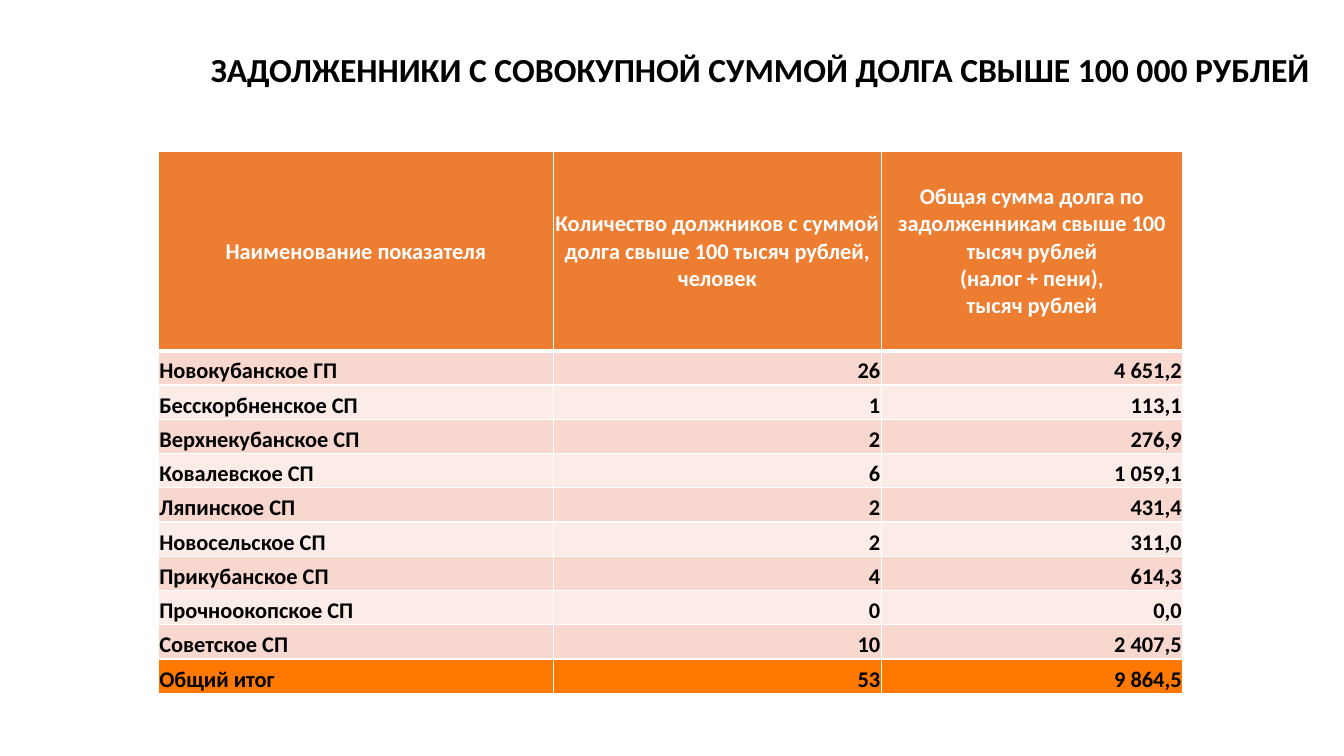
from dataclasses import dataclass

from lxml.etree import SubElement
from pptx import Presentation
from pptx.dml.color import RGBColor
from pptx.enum.text import MSO_ANCHOR, PP_ALIGN
from pptx.oxml.ns import qn
from pptx.util import Inches, Pt

COLORS = {
    "header": "ED7D31",
    "odd": "F8D7CE",
    "even": "FCECE8",
    "total": "FF7900",
    "white": "FFFFFF",
    "black": "000000",
}
FONT = "Calibri"
COLUMN_WIDTHS = (3.92, 3.25, 2.99)
HEADER_HEIGHT = 1.98
ROW_HEIGHT = 0.34


@dataclass
class Debt:
    settlement: str
    debtors: str
    amount: str


HEADER = Debt(
    "Наименование показателя",
    "Количество должников с суммой долга свыше 100 тысяч рублей, человек",
    "Общая сумма долга по задолженникам свыше 100 тысяч рублей\n(налог + пени),\nтысяч рублей",
)
DEBTS = [
    Debt("Новокубанское ГП", "26", "4 651,2"),
    Debt("Бесскорбненское СП", "1", "113,1"),
    Debt("Верхнекубанское СП", "2", "276,9"),
    Debt("Ковалевское СП", "6", "1 059,1"),
    Debt("Ляпинское СП", "2", "431,4"),
    Debt("Новосельское СП", "2", "311,0"),
    Debt("Прикубанское СП", "4", "614,3"),
    Debt("Прочноокопское СП", "0", "0,0"),
    Debt("Советское СП", "10", "2 407,5"),
]
TOTAL = Debt("Общий итог", "53", "9 864,5")


def format_paragraph(paragraph, size: int, color: str, align: PP_ALIGN) -> None:
    paragraph.alignment = align
    paragraph.font.name = FONT
    paragraph.font.size = Pt(size)
    paragraph.font.bold = True
    paragraph.font.color.rgb = RGBColor.from_string(COLORS[color])


def add_borders(cell, top: int, bottom: int) -> None:
    properties = cell._tc.get_or_add_tcPr()
    for tag, width in (("a:lnL", 1), ("a:lnR", 1), ("a:lnT", top), ("a:lnB", bottom)):
        border = SubElement(properties, qn(tag), w=str(Pt(width)))
        fill = SubElement(border, qn("a:solidFill"))
        SubElement(fill, qn("a:srgbClr"), val=COLORS["white"])


def fill_row(table, index: int, debt: Debt, fill: str) -> None:
    is_header = index == 0
    for column, text in enumerate((debt.settlement, debt.debtors, debt.amount)):
        cell = table.cell(index, column)
        cell.text = text
        cell.margin_left = cell.margin_right = cell.margin_top = Inches(0.01)
        cell.margin_bottom = 0
        cell.vertical_anchor = MSO_ANCHOR.MIDDLE if is_header else MSO_ANCHOR.BOTTOM
        add_borders(cell, 3 if index == 1 else 1, 3 if is_header else 1)
        cell.fill.solid()
        cell.fill.fore_color.rgb = RGBColor.from_string(COLORS[fill])
        if is_header:
            align = PP_ALIGN.CENTER
        else:
            align = PP_ALIGN.RIGHT if column else PP_ALIGN.LEFT
        for paragraph in cell.text_frame.paragraphs:
            format_paragraph(paragraph, 16, "white" if is_header else "black", align)


def add_title(slide) -> None:
    title = slide.shapes.title
    title.left, title.top = Inches(1.42), Inches(0.29)
    title.width, title.height = Inches(11.67), Inches(0.85)
    title.text_frame.text = "ЗАДОЛЖЕННИКИ С СОВОКУПНОЙ СУММОЙ ДОЛГА СВЫШЕ 100 000 РУБЛЕЙ"
    title.text_frame.vertical_anchor = MSO_ANCHOR.MIDDLE
    heading = title.text_frame.paragraphs[0]
    heading.line_spacing = 0.9
    format_paragraph(heading, 24, "black", PP_ALIGN.RIGHT)


def add_debt_table(slide) -> None:
    stripes = [(debt, ("odd", "even")[i % 2]) for i, debt in enumerate(DEBTS)]
    rows = [(HEADER, "header"), *stripes, (TOTAL, "total")]
    heights = [HEADER_HEIGHT] + [ROW_HEIGHT] * (len(rows) - 1)
    table = slide.shapes.add_table(
        len(rows), len(COLUMN_WIDTHS), Inches(1.57), Inches(1.5),
        Inches(sum(COLUMN_WIDTHS)), Inches(sum(heights)),
    ).table
    for column, width in zip(table.columns, COLUMN_WIDTHS):
        column.width = Inches(width)
    for index, ((debt, fill), height) in enumerate(zip(rows, heights)):
        table.rows[index].height = Inches(height)
        fill_row(table, index, debt, fill)


def main() -> None:
    presentation = Presentation()
    presentation.slide_width = Inches(13.33)
    presentation.slide_height = Inches(7.5)
    slide = presentation.slides.add_slide(presentation.slide_layouts[5])
    add_title(slide)
    add_debt_table(slide)
    presentation.save("out.pptx")


if __name__ == "__main__":
    main()
